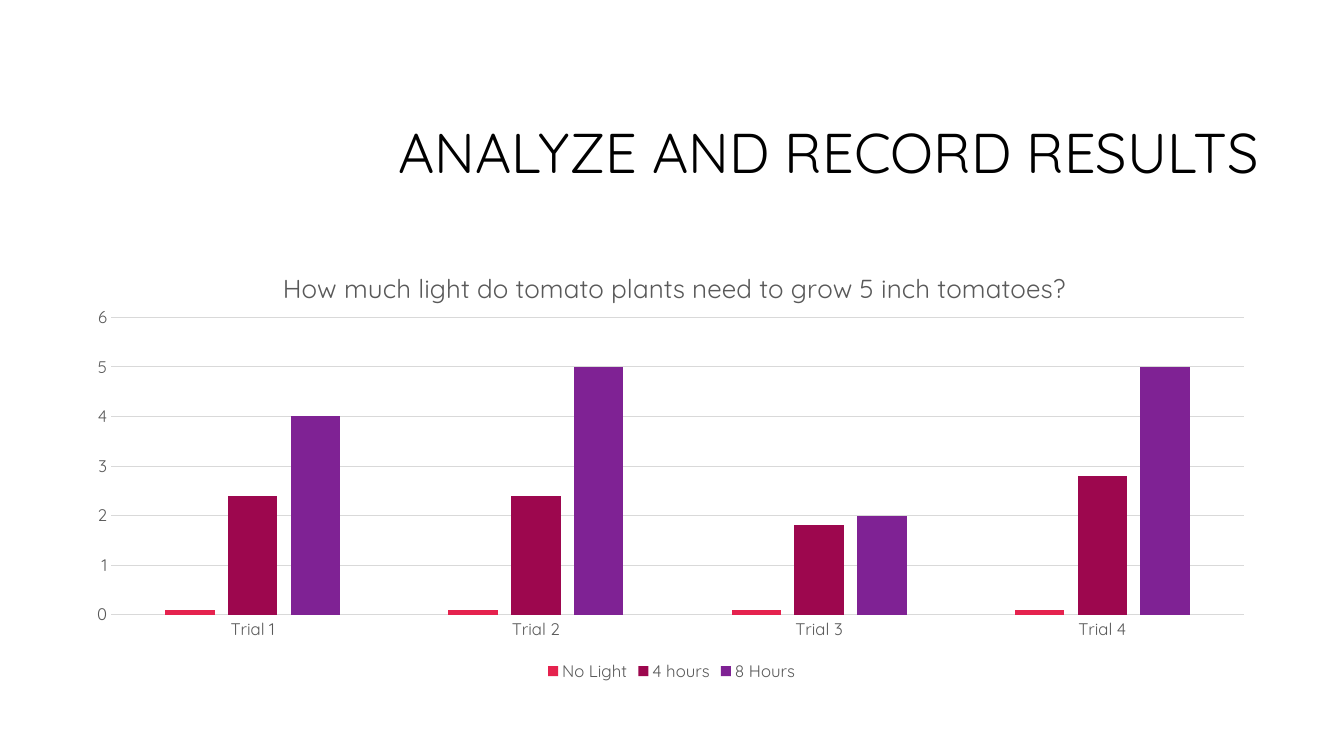
from lxml.etree import SubElement
from pptx import Presentation
from pptx.chart.data import CategoryChartData
from pptx.dml.color import RGBColor
from pptx.enum.chart import XL_CHART_TYPE, XL_LEGEND_POSITION, XL_TICK_MARK
from pptx.enum.text import MSO_ANCHOR, MSO_AUTO_SIZE, PP_ALIGN
from pptx.oxml import parse_xml
from pptx.oxml.ns import nsdecls, qn
from pptx.util import Cm, Pt

TRIALS = ["Trial 1", "Trial 2", "Trial 3", "Trial 4"]
GROWTH = [
    ("No Light", [0.1, 0.1, 0.1, 0.1], "E5224E"),
    ("4 hours", [2.4, 2.4, 1.8, 2.8], "9D074E"),
    ("8 Hours", [4, 5, 2, 5], "7F2294"),
]


def color(hex_code):
    return RGBColor.from_string(hex_code)


def manual_layout(**settings):
    layout = parse_xml(f"<c:layout {nsdecls('c')}><c:manualLayout/></c:layout>")
    for tag, value in settings.items():
        SubElement(layout[0], qn(f"c:{tag}")).set("val", str(value))
    return layout


def place(parent, index, layout):
    for previous in parent.findall(qn("c:layout")):
        parent.remove(previous)
    parent.insert(index, layout)


class ResultsSlide:
    typeface = "Quicksand"
    heading = "000000"
    label = "595959"
    rule = "D9D9D9"

    def __init__(self, presentation):
        self.slide = presentation.slides.add_slide(presentation.slide_layouts[5])

    def style(self, font, size, hex_code):
        font.name = self.typeface
        font.size = Pt(size)
        font.bold = False
        font.color.rgb = color(hex_code)

    def draw_rule(self, line):
        line.color.rgb = color(self.rule)
        line.width = Pt(0.75)

    def add_title(self, wording, left, top, width, height):
        title = self.slide.shapes.title
        title.left, title.top = Cm(left), Cm(top)
        title.width, title.height = Cm(width), Cm(height)
        frame = title.text_frame
        frame.text = wording
        frame.word_wrap = True
        frame.auto_size = MSO_AUTO_SIZE.NONE
        frame.vertical_anchor = MSO_ANCHOR.MIDDLE
        paragraph = frame.paragraphs[0]
        paragraph.alignment = PP_ALIGN.RIGHT
        paragraph.line_spacing = 0.9
        self.style(paragraph.runs[0].font, 40, self.heading)

    def add_column_chart(self, question, categories, series, left, top, width, height):
        data = CategoryChartData()
        data.categories = categories
        for name, values, _ in series:
            data.add_series(name, values)
        chart = self.slide.shapes.add_chart(
            XL_CHART_TYPE.COLUMN_CLUSTERED,
            Cm(left), Cm(top), Cm(width), Cm(height), data,
        ).chart
        self.style(chart.font, 10, self.heading)

        plot = chart.plots[0]
        plot.gap_width = 219
        plot.overlap = -27
        plot.vary_by_categories = False
        for columns, (_, _, hex_code) in zip(plot.series, series):
            columns.format.fill.solid()
            columns.format.fill.fore_color.rgb = color(hex_code)
            columns.invert_if_negative = False

        self.format_axes(chart)
        self.add_question(chart, question)

        chart.has_legend = True
        chart.legend.position = XL_LEGEND_POSITION.BOTTOM
        chart.legend.include_in_layout = False
        self.style(chart.legend.font, 12, self.label)

        plot_area = chart.element.find(f".//{qn('c:plotArea')}")
        place(plot_area, 0, manual_layout(
            layoutTarget="inner", xMode="edge", yMode="edge",
            x=0.03, y=0.17, w=0.95, h=0.67,
        ))

    def format_axes(self, chart):
        for axis in (chart.category_axis, chart.value_axis):
            axis.major_tick_mark = XL_TICK_MARK.NONE
            axis.minor_tick_mark = XL_TICK_MARK.NONE
            self.style(axis.tick_labels.font, 12, self.label)
        self.draw_rule(chart.category_axis.format.line)
        scale = chart.value_axis
        scale.minimum_scale, scale.maximum_scale, scale.major_unit = 0, 6, 1
        scale.format.line.fill.background()
        scale.has_major_gridlines = True
        self.draw_rule(scale.major_gridlines.format.line)

    def add_question(self, chart, question):
        chart.has_title = True
        heading = chart.chart_title
        heading.include_in_layout = False
        heading.text_frame.text = question
        self.style(heading.text_frame.paragraphs[0].runs[0].font, 18.6, self.label)
        place(heading.element, 1, manual_layout(xMode="edge", yMode="edge", x=0.17, y=0.05))


def main():
    presentation = Presentation()
    presentation.slide_width, presentation.slide_height = Cm(33.87), Cm(19.05)
    results = ResultsSlide(presentation)
    results.add_title("ANALYZE AND RECORD RESULTS", 8.05, 2.13, 23.93, 3.58)
    results.add_column_chart(
        "How much light do tomato plants need to grow 5 inch tomatoes?",
        TRIALS, GROWTH, 1.9, 6.1, 30.05, 11.18,
    )
    presentation.save("out.pptx")


if __name__ == "__main__":
    main()
